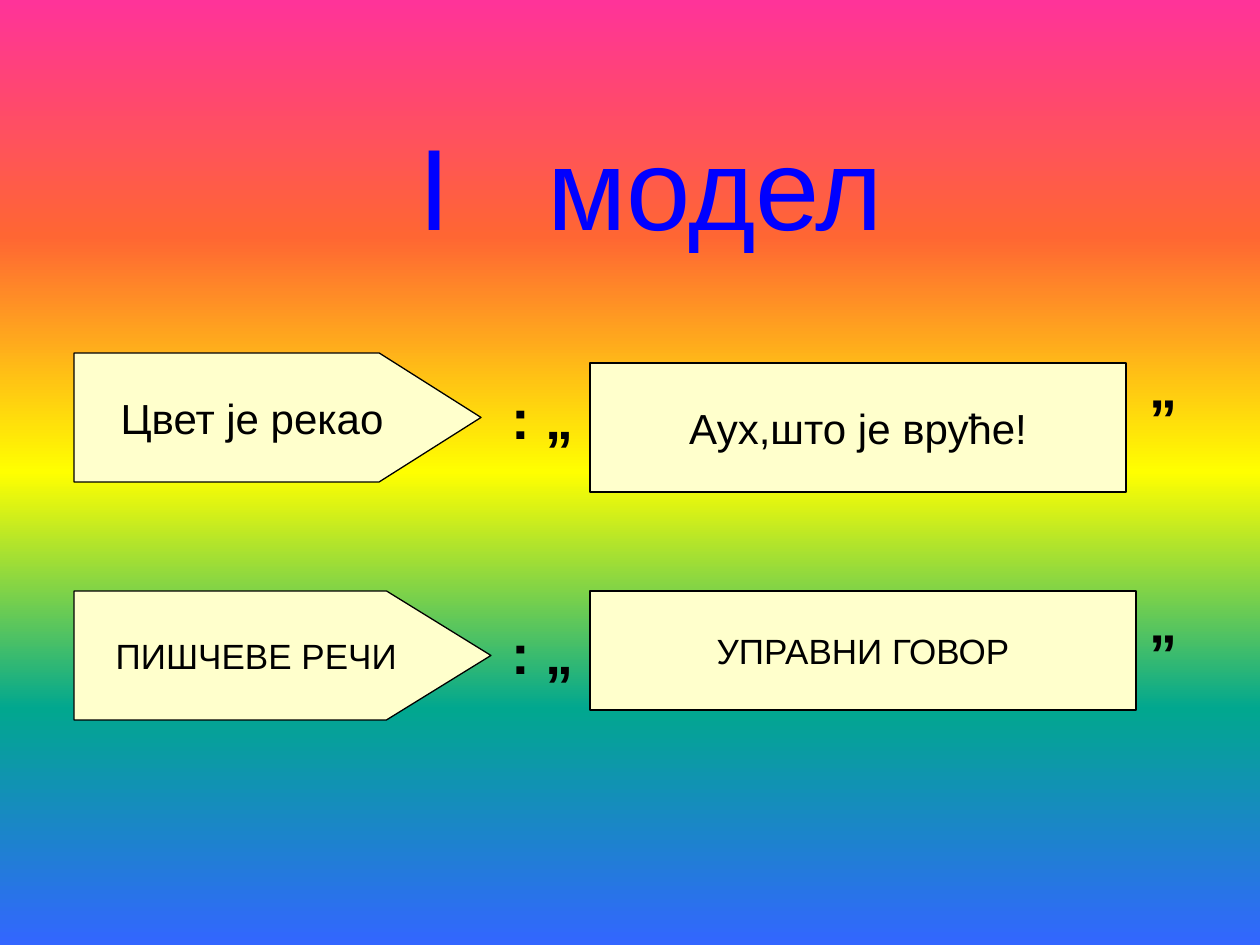
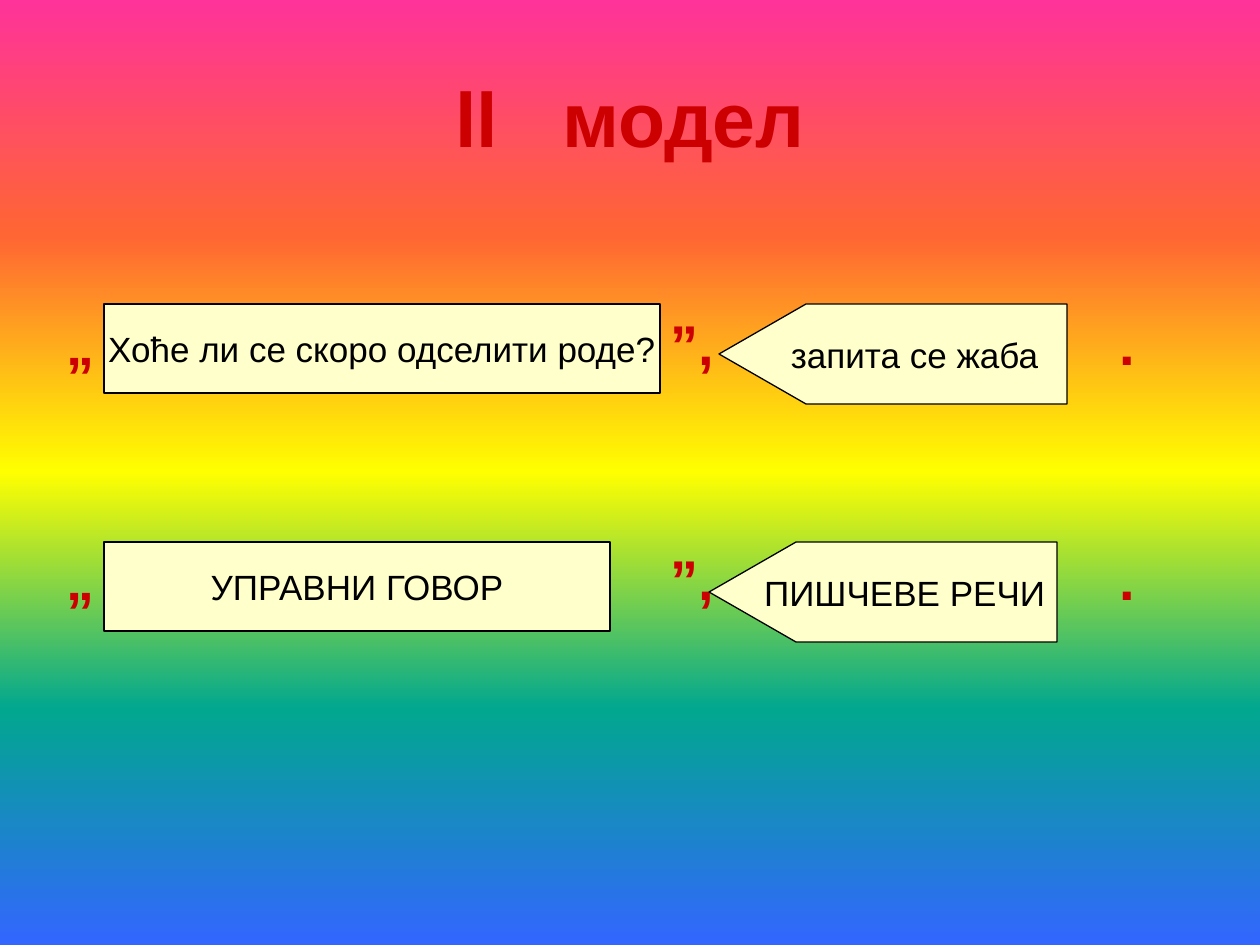
import lxml.etree
import pptx
import pptx.dml.color
import pptx.enum.shapes
import pptx.enum.text
import pptx.oxml.ns
import pptx.util

EMU_PER_PX = 914400 / 126
FONT = "Arial"
SPACE_WIDTH = 0.278  # of the font size
COLORS = {
    "pink": "FF3399", "orange": "FF6633", "yellow": "FFFF00",
    "green": "01A78F", "sky": "3366FF",
    "card": "FFFFCC", "ink": "000000", "blue": "0000FF", "red": "CC0000",
}
RECT = pptx.enum.shapes.MSO_SHAPE.RECTANGLE
PLATE = pptx.enum.shapes.MSO_SHAPE.PENTAGON
CENTER = pptx.enum.text.PP_ALIGN.CENTER
MIDDLE = pptx.enum.text.MSO_ANCHOR.MIDDLE
NO_FIT = pptx.enum.text.MSO_AUTO_SIZE.NONE
qn = pptx.oxml.ns.qn


def px(length):
    return pptx.util.Emu(round(length * EMU_PER_PX))


def add_runs(paragraph, parts, size, color, bold=False):
    """Add text parts; a number stands for one space as wide as that many."""
    for part in parts:
        run = paragraph.add_run()
        run.font.name = FONT
        run.font.size = pptx.util.Pt(size)
        run.font.bold = bold
        run.font.color.rgb = pptx.dml.color.RGBColor.from_string(COLORS[color])
        if isinstance(part, int):
            run.text = " "
            extra = (part - 1) * SPACE_WIDTH * size
            run.font._element.set("spc", str(round(extra * 100)))
        else:
            run.text = part


# Each model: title, punctuation lines and cards.
# Card: outline, box in px, share of the plate before its tip, turn, text, size
models = [
    {
        "title": ("I", 3, "модел"), "title_box": (84, 106, 1134, 157),
        "title_style": (66, "blue", False),
        "marks": (": „", 37, "”"), "marks_color": "ink", "marks_indent": 436,
        "marks_box": (63, 220, 1134, 624), "marks_top": 163,
        "cards": [
            (PLATE, (74, 353, 407, 129), 0.79, 0, "Цвет је рекао", 24),
            (PLATE, (74, 591, 417, 129), 0.81, 0, "ПИШЧЕВЕ РЕЧИ", 20),
            (RECT, (590, 363, 536, 129), None, 0, "Аух,што је вруће!", 24),
            (RECT, (590, 591, 546, 119), None, 0, "УПРАВНИ ГОВОР", 20),
        ],
    },
    {
        "title": ("ll", 3, "модел"), "title_box": (63, 38, 1134, 157),
        "title_style": (44, "red", True),
        "marks": ("„", 37, "”,", 26, "."), "marks_color": "red", "marks_indent": 0,
        "marks_box": (54, 224, 1134, 624), "marks_top": 85,
        "cards": [
            (RECT, (104, 542, 506, 89), None, 0, "УПРАВНИ ГОВОР", 20),
            (RECT, (104, 304, 556, 89), None, 0,
             "Хоће ли се скоро одселити роде?", 20),
            (PLATE, (719, 304, 348, 100), 0.87, 180, "запита се жаба", 20),
            (PLATE, (709, 542, 348, 100), 0.87, 180, "ПИШЧЕВЕ РЕЧИ", 20),
        ],
    },
]

deck = pptx.Presentation()
deck.slide_width, deck.slide_height = px(1260), px(945)

# Rainbow background shared through the master
master = deck.slide_master
backdrop = master.background.fill
backdrop.gradient()
backdrop.gradient_angle = 270
stops = next(master.element.iter(qn("a:gsLst")))
for stop in list(stops):
    stops.remove(stop)
for index, name in enumerate(("pink", "orange", "yellow", "green", "sky")):
    stop = lxml.etree.SubElement(stops, qn("a:gs"), pos=str(index * 25000))
    lxml.etree.SubElement(stop, qn("a:srgbClr"), val=COLORS[name])

for model in models:
    slide = deck.slides.add_slide(deck.slide_layouts[1])

    # Title
    title = slide.shapes.title
    title.left, title.top, title.width, title.height = map(px, model["title_box"])
    title.text_frame.vertical_anchor = MIDDLE
    title.text_frame.auto_size = NO_FIT
    heading = title.text_frame.paragraphs[0]
    heading.alignment = CENTER
    add_runs(heading, model["title"], *model["title_style"])

    # Punctuation around the cards, the same line twice
    marks = slide.placeholders[1]
    marks.left, marks.top, marks.width, marks.height = map(px, model["marks_box"])
    frame = marks.text_frame
    frame.auto_size = NO_FIT
    frame.margin_top = px(model["marks_top"])
    for row in range(2):
        line = frame.add_paragraph() if row else frame.paragraphs[0]
        line.space_before = pptx.util.Pt(96 * row)
        props = line._p.get_or_add_pPr()
        props.set("marL", str(int(px(model["marks_indent"]))))
        props.set("indent", "0")
        lxml.etree.SubElement(props, qn("a:buNone"))
        add_runs(line, model["marks"], 32, model["marks_color"], True)

    # Cards with the sentence and its scheme
    for outline, box, tip, turn, text, size in model["cards"]:
        card = slide.shapes.add_shape(outline, *map(px, box))
        card.shadow.inherit = False
        card.fill.solid()
        card.fill.fore_color.rgb = pptx.dml.color.RGBColor.from_string(COLORS["card"])
        card.line.color.rgb = pptx.dml.color.RGBColor.from_string(COLORS["ink"])
        card.line.width = pptx.util.Pt(0.75)
        if tip:
            card.adjustments[0] = tip
        card.text_frame.word_wrap = False
        card.text_frame.vertical_anchor = MIDDLE
        if turn:
            card.rotation = turn
            card.text_frame._txBody.bodyPr.set("rot", str(turn * 60000))
        caption = card.text_frame.paragraphs[0]
        caption.alignment = CENTER
        add_runs(caption, [text], size, "ink")

deck.save("out.pptx")
